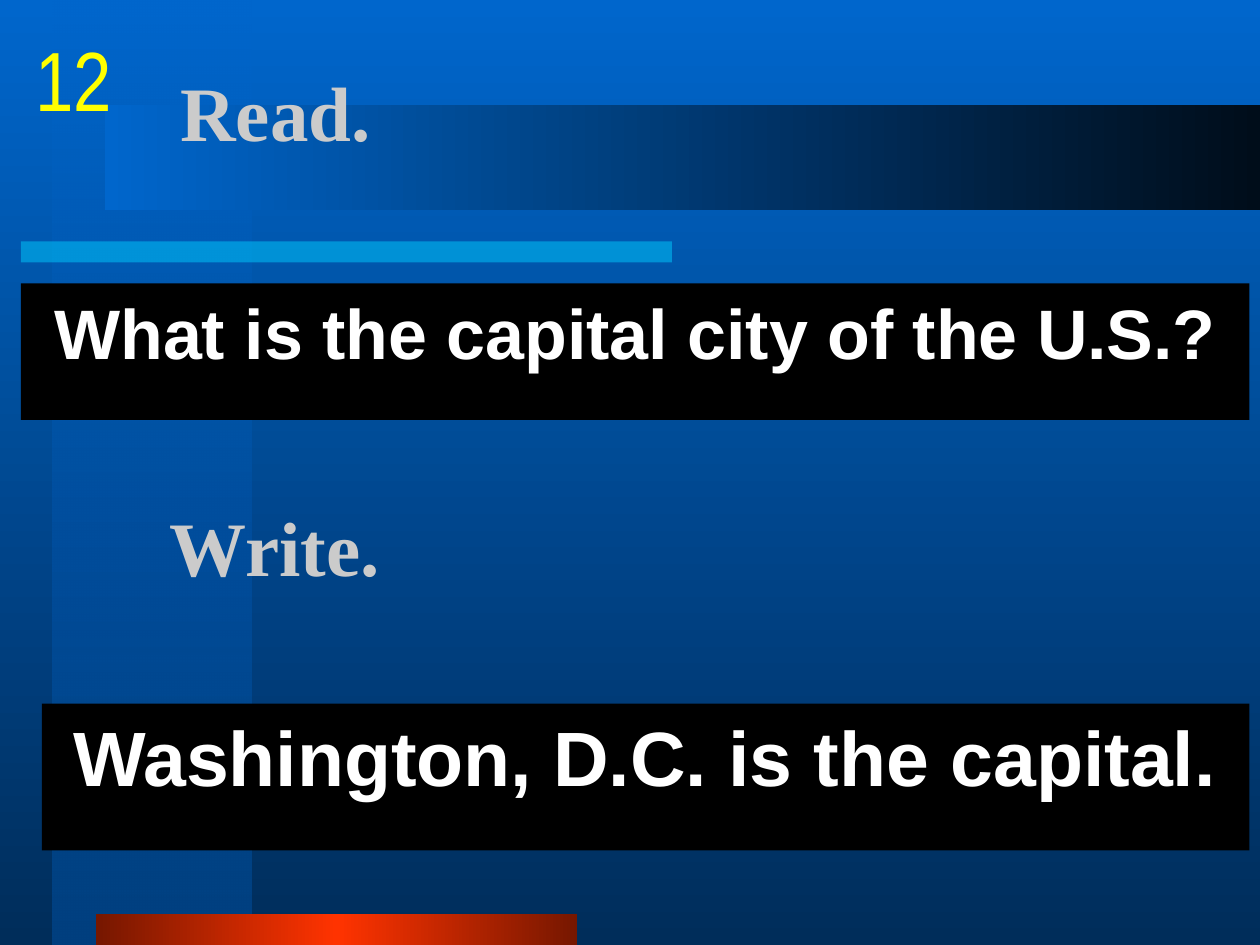
import pptx
import pptx.dml.color
import pptx.enum.shapes
import pptx.enum.text
import pptx.oxml.ns
import pptx.util
from lxml import etree

Pt = pptx.util.Pt
RGB = pptx.dml.color.RGBColor
ALIGN = pptx.enum.text.PP_ALIGN
ANCHOR = pptx.enum.text.MSO_ANCHOR
qn = pptx.oxml.ns.qn

BLUE = RGB(0x00, 0x66, 0xCC)
MID_BLUE = RGB(0x00, 0x40, 0x80)
DARK_BLUE = RGB(0x00, 0x2D, 0x5A)
NIGHT = RGB(0x00, 0x0D, 0x1A)
CYAN = RGB(0x00, 0xCC, 0xFF)
RED = RGB(0xFF, 0x33, 0x00)
DARK_RED = RGB(0x76, 0x17, 0x00)
BLACK = RGB(0x00, 0x00, 0x00)
WHITE = RGB(0xFF, 0xFF, 0xFF)
GREY = RGB(0xCB, 0xCB, 0xCB)
YELLOW = RGB(0xFF, 0xFF, 0x00)

DOWN, RIGHT = 270, 0


def add_alpha(color, percent):
    etree.SubElement(color, qn("a:alpha"), val=str(percent * 1000))


class Slide:
    HEADING = dict(name="Times New Roman", size=Pt(44), bold=True)
    SENTENCE = dict(name="Arial", bold=True)
    NUMBER = dict(name="Arial Narrow", size=Pt(48))
    HANGING = dict(alignment=ALIGN.CENTER, space_before=Pt(4.6))

    def __init__(self, prs):
        self.s = prs.slides.add_slide(prs.slide_layouts[6])

    def gradient(self, fill, element, colors, angle, first_alpha=100):
        """Spread the colours evenly; element is the XML that holds the fill."""
        fill.gradient()
        fill.gradient_angle = angle
        stops = next(element.iter(qn("a:gsLst")))
        for stop in list(stops):
            stops.remove(stop)
        for i, color in enumerate(colors):
            pos = 100000 * i // (len(colors) - 1)
            gs = etree.SubElement(stops, qn("a:gs"), pos=str(pos))
            clr = etree.SubElement(gs, qn("a:srgbClr"), val=str(color))
            if i == 0 and first_alpha < 100:
                add_alpha(clr, first_alpha)

    def background(self, colors):
        self.gradient(self.s.background.fill, self.s.element, colors, DOWN)

    def rect(self, box, color=None):
        sp = self.s.shapes.add_shape(
            pptx.enum.shapes.MSO_SHAPE.RECTANGLE, *map(Pt, box))
        sp.shadow.inherit = False
        sp.line.fill.background()
        if color is not None:
            sp.fill.solid()
            sp.fill.fore_color.rgb = color
        return sp

    def gradient_rect(self, box, colors, angle, first_alpha=100):
        sp = self.rect(box)
        self.gradient(sp.fill, sp.element, colors, angle, first_alpha)

    def clear_rect(self, box, color, alpha):
        sp = self.rect(box, color)
        add_alpha(next(sp.element.spPr.iter(qn("a:srgbClr"))), alpha)

    def set_text(self, sp, text, color, font, para, anchor, wrap=True):
        tf = sp.text_frame
        tf.word_wrap = wrap
        tf.vertical_anchor = anchor
        p = tf.paragraphs[0]
        r = p.add_run()
        r.text = text
        for target, values in ((p, para), (r.font, font)):
            for name, value in values.items():
                setattr(target, name, value)
        r.font.color.rgb = color

    def text(self, box, text, color, font, para, anchor, wrap=True):
        sp = self.s.shapes.add_textbox(*map(Pt, box))
        self.set_text(sp, text, color, font, para, anchor, wrap)

    def heading(self, box, text):
        self.text(box, text, GREY, self.HEADING, dict(alignment=ALIGN.LEFT),
                  ANCHOR.MIDDLE)

    def number(self, box, text):
        self.text(box, text, YELLOW, self.NUMBER,
                  dict(alignment=ALIGN.CENTER), ANCHOR.TOP, wrap=False)

    def sentence(self, box, text, size):
        sp = self.rect(box, BLACK)
        self.set_text(sp, text, WHITE, dict(self.SENTENCE, size=Pt(size)),
                      self.HANGING, ANCHOR.TOP)
        pPr = next(sp.element.iter(qn("a:pPr")))
        pPr.set("marL", str(Pt(27)))
        pPr.set("indent", str(-Pt(27)))


def main():
    prs = pptx.Presentation()
    prs.slide_width, prs.slide_height = Pt(720), Pt(540)
    s = Slide(prs)

    s.background([BLUE, DARK_BLUE])
    s.gradient_rect((30, 0, 114, 540), [BLUE, MID_BLUE], DOWN, first_alpha=50)
    s.clear_rect((12, 138, 372, 12), CYAN, 50)
    s.gradient_rect((55, 522, 275, 18), [DARK_RED, RED, DARK_RED], RIGHT)
    s.gradient_rect((60, 60, 660, 60), [BLUE, NIGHT], RIGHT)

    s.heading((96, 18, 612, 90), "Read.")
    s.sentence((12, 162, 702, 78), "What is the capital city of the U.S.?", 40)
    s.heading((90, 252, 612, 120), "Write.")
    s.sentence((24, 402, 690, 84), "Washington, D.C. is the capital.", 44)
    s.number((12, 12, 60, 60), "12")

    prs.save("out.pptx")


if __name__ == "__main__":
    main()
